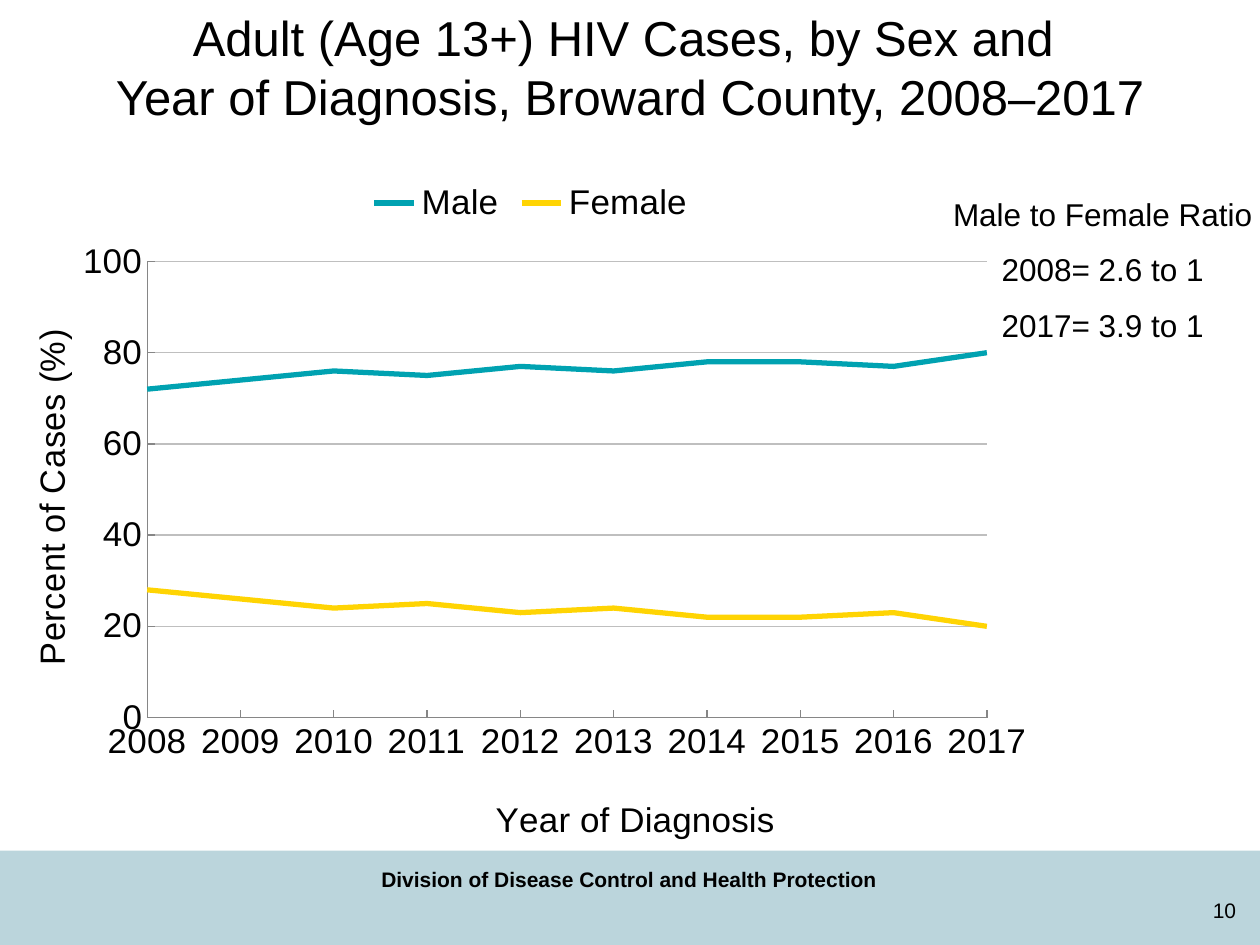
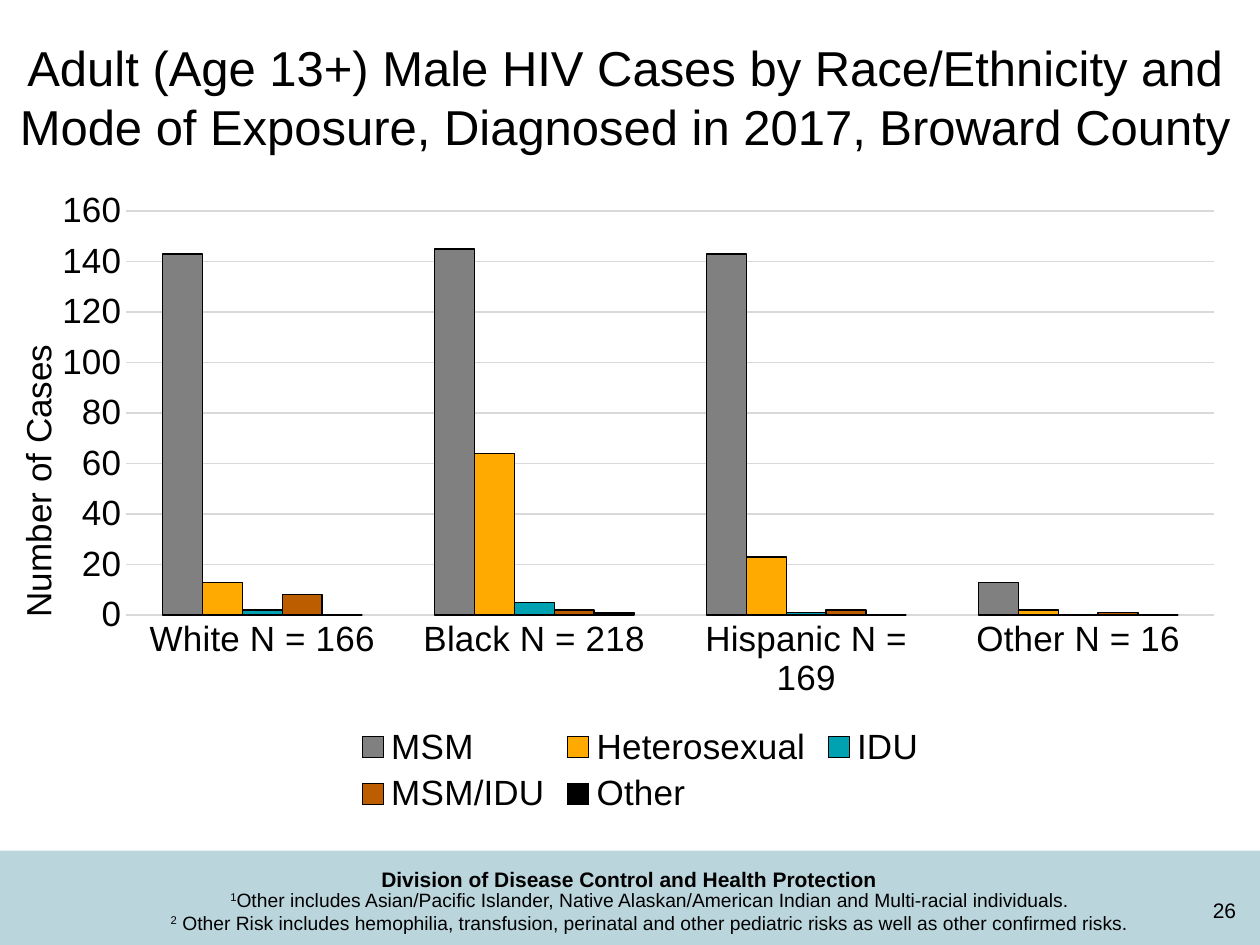
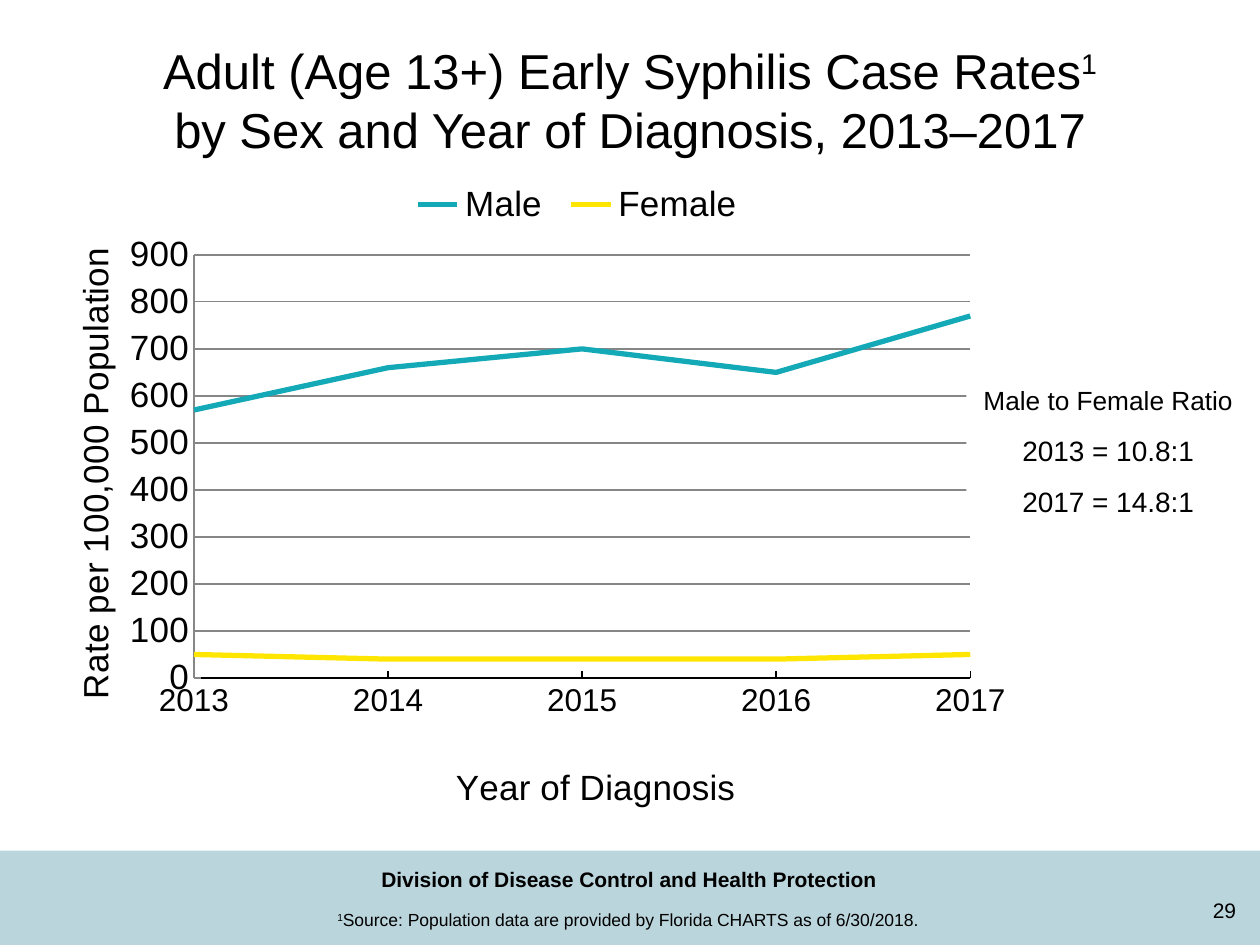
"""Build three county health slides with charts, ratios and notes."""
from dataclasses import dataclass
from typing import Any, Optional

from pptx import Presentation
from pptx.chart.data import CategoryChartData
from pptx.dml.color import RGBColor
from pptx.enum.chart import XL_CHART_TYPE, XL_LEGEND_POSITION, XL_TICK_MARK
from pptx.enum.shapes import MSO_SHAPE
from pptx.enum.text import MSO_ANCHOR, PP_ALIGN
from pptx.oxml.ns import qn
from pptx.oxml.xmlchemy import OxmlElement
from pptx.util import Cm, Pt

LINE, COLUMN = XL_CHART_TYPE.LINE, XL_CHART_TYPE.COLUMN_CLUSTERED
TOP_KEY, LOW_KEY = XL_LEGEND_POSITION.TOP, XL_LEGEND_POSITION.BOTTOM
INSIDE, NO_TICK = XL_TICK_MARK.INSIDE, XL_TICK_MARK.NONE
RECT = MSO_SHAPE.RECTANGLE
UPPER, MIDDLE = MSO_ANCHOR.TOP, MSO_ANCHOR.MIDDLE
LEFT, CENTER, RIGHT = PP_ALIGN.LEFT, PP_ALIGN.CENTER, PP_ALIGN.RIGHT

FACE = "Arial"
BLACK, WHITE, BAND = "000000", "FFFFFF", "BBD5DC"
TEAL, GRAY, PALE = "00A2B1", "868686", "D9D9D9"
WIDE, HIGH = 25.4, 19.05
DIVISION = "Division of Disease Control and Health Protection"

Spot = tuple[float, ...]


@dataclass
class Note:
    """Text block; pieces between carets are raised."""
    spot: Spot
    lines: list[str]
    size: float
    align: Any = CENTER
    anchor: Any = UPPER
    bold: bool = False
    gap: float = 0
    turn: float = 0
    fill: Optional[str] = None
    first: Optional[float] = None


@dataclass
class Series:
    """Named chart values with a colour."""
    name: str
    vals: list[int]
    color: str


@dataclass
class Title:
    """Axis title and its place as shares of the chart."""
    text: str
    spot: Spot


@dataclass
class Graph:
    """Chart data and look."""
    spot: Spot
    kind: Any
    cats: list[str]
    series: list[Series]
    plot: Spot
    top: int
    step: int
    grid: str
    base: str
    tick: Any = INSIDE
    key: Any = TOP_KEY
    key_spot: Optional[Spot] = None
    cat_size: float = 20
    below: Optional[Title] = None
    beside: Optional[Title] = None


@dataclass
class Page:
    """One slide."""
    number: str
    title: Note
    graph: Graph
    notes: list[Note]


def tint(color: str) -> RGBColor:
    """Turn a hex string into a colour."""
    return RGBColor.from_string(color)


def apply(item: Any, values: dict[str, Any]) -> None:
    """Set each named value on the item."""
    for name, value in values.items():
        setattr(item, name, value)


def style(font: Any, size: float, bold: bool = False) -> None:
    """Give a font the deck's look."""
    apply(font, {"name": FACE, "size": Pt(size), "bold": bold})
    font.color.rgb = tint(BLACK)


def paint(fill: Any, color: str) -> None:
    """Fill with one colour."""
    fill.solid()
    fill.fore_color.rgb = tint(color)


def stroke(line: Any, color: str, width: float = 0.75) -> None:
    """Draw a line in one colour."""
    line.color.rgb = tint(color)
    line.width = Pt(width)


def add_rect(slide: Any, spot: Spot, color: str) -> Any:
    """Add a plain filled rectangle."""
    shape = slide.shapes.add_shape(RECT, *map(Cm, spot))
    shape.shadow.inherit = False
    paint(shape.fill, color)
    shape.line.fill.background()
    return shape


def add_note(slide: Any, note: Note) -> None:
    """Add a text block."""
    if note.fill:
        shape = add_rect(slide, note.spot, note.fill)
    else:
        shape = slide.shapes.add_textbox(*map(Cm, note.spot))
    shape.rotation = note.turn
    frame = shape.text_frame
    apply(frame, {"word_wrap": True, "vertical_anchor": note.anchor})
    for row, text in enumerate(note.lines):
        para = frame.add_paragraph() if row else frame.paragraphs[0]
        para.alignment = note.align
        para.space_before = Pt(note.gap if row else 0)
        size = note.size if row or not note.first else note.first
        for part, piece in enumerate(text.split("^")):
            if piece:
                run = para.add_run()
                run.text = piece
                style(run.font, size, note.bold)
                if part % 2:
                    run.font._element.set("baseline", "30000")


def make(tag: str, value: str) -> Any:
    """Make a chart element that holds one value."""
    node = OxmlElement(f"c:{tag}")
    node.set("val", value)
    return node


def place(node: Any, spot: Spot, inner: bool = False) -> None:
    """Fix a chart part by shares of the chart's size."""
    layout = node.find(qn("c:layout"))
    if layout is None:
        layout = OxmlElement("c:layout")
        node.insert(0 if inner else 1, layout)
    for child in list(layout):
        layout.remove(child)
    manual = OxmlElement("c:manualLayout")
    layout.append(manual)
    pairs = [("layoutTarget", "inner")] if inner else []
    pairs += [("xMode", "edge"), ("yMode", "edge")]
    pairs += [(tag, str(share)) for tag, share in zip("xywh", spot)]
    for tag, value in pairs:
        manual.append(make(tag, value))


def name_axis(axis: Any, title: Title, turn: int) -> None:
    """Add an axis title."""
    head = axis.axis_title
    para = head.text_frame.paragraphs[0]
    run = para.add_run()
    run.text = title.text
    style(run.font, 20)
    body = head.text_frame._txBody.find(qn("a:bodyPr"))
    body.set("rot", str(turn * 60000))
    body.set("vert", "horz")
    place(head._element, title.spot)


def cross_mid(chart: Any) -> None:
    """Start the lines on the value axis."""
    axis = chart._chartSpace.find(".//" + qn("c:valAx"))
    for old in axis.findall(qn("c:crossBetween")):
        axis.remove(old)
    axis.find(qn("c:crosses")).addnext(make("crossBetween", "midCat"))


def add_graph(slide: Any, graph: Graph) -> None:
    """Add a line or column chart."""
    data = CategoryChartData()
    data.categories = graph.cats
    for item in graph.series:
        data.add_series(item.name, item.vals)
    chart = slide.shapes.add_chart(graph.kind, *map(Cm, graph.spot), data).chart
    style(chart.font, 20)
    apply(chart, {"has_title": False, "has_legend": True})
    apply(chart.legend, {"position": graph.key, "include_in_layout": False})
    style(chart.legend.font, 20)
    if graph.key_spot:
        place(chart.legend._element, graph.key_spot)
    place(chart._chartSpace.find(".//" + qn("c:plotArea")), graph.plot, True)

    cat, val = chart.category_axis, chart.value_axis
    for axis, size, title, turn in ((cat, graph.cat_size, graph.below, 0),
                                    (val, 20, graph.beside, -90)):
        apply(axis, {"major_tick_mark": graph.tick, "minor_tick_mark": NO_TICK})
        style(axis.tick_labels.font, size)
        if title:
            name_axis(axis, title, turn)
    apply(val, {"minimum_scale": 0, "maximum_scale": graph.top,
                "major_unit": graph.step, "has_major_gridlines": True})
    stroke(val.major_gridlines.format.line, graph.grid)
    stroke(cat.format.line, graph.base)

    plot = chart.plots[0]
    plot.vary_by_categories = False
    lines = graph.kind == LINE
    if lines:
        stroke(val.format.line, GRAY)
        cross_mid(chart)
    else:
        val.format.line.fill.background()
        apply(plot, {"gap_width": 182, "overlap": 0})
    for item, drawn in zip(graph.series, plot.series):
        if lines:
            drawn.smooth = False
            stroke(drawn.format.line, item.color, 3)
        else:
            paint(drawn.format.fill, item.color)
            stroke(drawn.format.line, BLACK)


def add_page(deck: Any, page: Page) -> None:
    """Add a slide with band, footer, chart and text."""
    slide = deck.slides.add_slide(deck.slide_layouts[6])
    add_rect(slide, (0, 17.15, WIDE, 1.9), BAND)
    add_note(slide, Note((19.25, 17.83, 5.92, 1.02), [page.number], 12,
                         RIGHT, MIDDLE))
    add_note(slide, Note((6.65, 17.35, 12.07, 0.76), [DIVISION], 12, bold=True))
    add_graph(slide, page.graph)
    for note in [page.title, *page.notes]:
        add_note(slide, note)


def years(start: int) -> list[str]:
    """List the years up to 2017."""
    return [str(year) for year in range(start, 2018)]


PAGES = [
    Page(
        "10",
        Note((0, 0.2, WIDE, 2.29),
             ["Adult (Age 13+) HIV Cases, by Sex and ",
              "Year of Diagnosis, Broward County, 2008–2017"], 28, anchor=MIDDLE),
        Graph((0.25, 3.38, 20.9, 13.77), LINE, years(2008),
              [Series("Male", [72, 74, 76, 75, 77, 76, 78, 78, 77, 80], TEAL),
               Series("Female", [28, 26, 24, 25, 23, 24, 22, 22, 23, 20],
                      "FFD403")],
              (0.13, 0.14, 0.81, 0.68), 100, 20, "BFBFBF", GRAY,
              below=Title("Year of Diagnosis", (0.46, 0.93)),
              beside=Title("Percent of Cases (%)", (0.01, 0.24))),
        [Note((18.42, 3.81, 7.62, 3.33),
              ["Male to Female Ratio", "2008= 2.6 to 1", "2017= 3.9 to 1"],
              18, gap=10)],
    ),
    Page(
        "26",
        Note((-0.1, 0.64, WIDE, 2.64),
             ["Adult (Age 13+) Male HIV Cases by Race/Ethnicity and "
              "Mode of Exposure, Diagnosed in 2017, Broward County"], 28),
        Graph((0.86, 3.61, 24.1, 12.93), COLUMN,
              ["White N = 166", "Black N = 218", "Hispanic N = 169",
               "Other N = 16"],
              [Series("MSM", [143, 145, 143, 13], "808080"),
               Series("Heterosexual", [13, 64, 23, 2], "FFAA00"),
               Series("IDU", [2, 5, 1, 0], TEAL),
               Series("MSM/IDU", [8, 2, 2, 1], "BC5E00"),
               Series("Other", [0, 1, 0, 0], BLACK)],
              (0.07, 0.05, 0.91, 0.63), 160, 20, PALE, PALE, NO_TICK, LOW_KEY),
        [Note((3, 17.78, 20.32, 1.68),
              ["^1^Other includes Asian/Pacific Islander, Native "
               "Alaskan/American Indian and Multi-racial individuals. ",
               "^2^ Other Risk includes hemophilia, transfusion, perinatal and "
               "other pediatric risks as well as other confirmed risks. "], 11),
         Note((-3.78, 7.59, 9.09, 1.12), ["Number of Cases"], 20, LEFT,
              turn=270)],
    ),
    Page(
        "29",
        Note((0, 0, WIDE, 4.01),
             ["Adult (Age 13+) Early Syphilis Case Rates^1^",
              "by Sex and Year of Diagnosis, 2013–2017"], 28, anchor=MIDDLE),
        Graph((0.94, 3.38, 19.81, 13.54), LINE, years(2013),
              [Series("Male", [570, 660, 700, 650, 770], "13A9B7"),
               Series("Female", [50, 40, 40, 40, 50], "FFE600")],
              (0.15, 0.13, 0.79, 0.63), 900, 100, GRAY, BLACK,
              key_spot=(0.36, 0.02, 0.36, 0.07), cat_size=18,
              below=Title("Year of Diagnosis", (0.41, 0.88)),
              beside=Title("Rate per 100,000 Population", (0.02, 0.11))),
        [Note((19.48, 7.62, 5.72, 2.97),
              ["Male to Female Ratio", "2013 = 10.8:1", "2017 = 14.8:1"],
              16, gap=10, fill=WHITE, first=15),
         Note((6.55, 18.21, 13.34, 0.69),
              ["^1^Source: Population data are provided by Florida CHARTS "
               "as of 6/30/2018."], 10, LEFT)],
    ),
]


def main() -> None:
    """Build and save the deck."""
    deck = Presentation()
    apply(deck, {"slide_width": Cm(WIDE), "slide_height": Cm(HIGH)})
    for page in PAGES:
        add_page(deck, page)
    deck.save("out.pptx")


if __name__ == "__main__":
    main()
